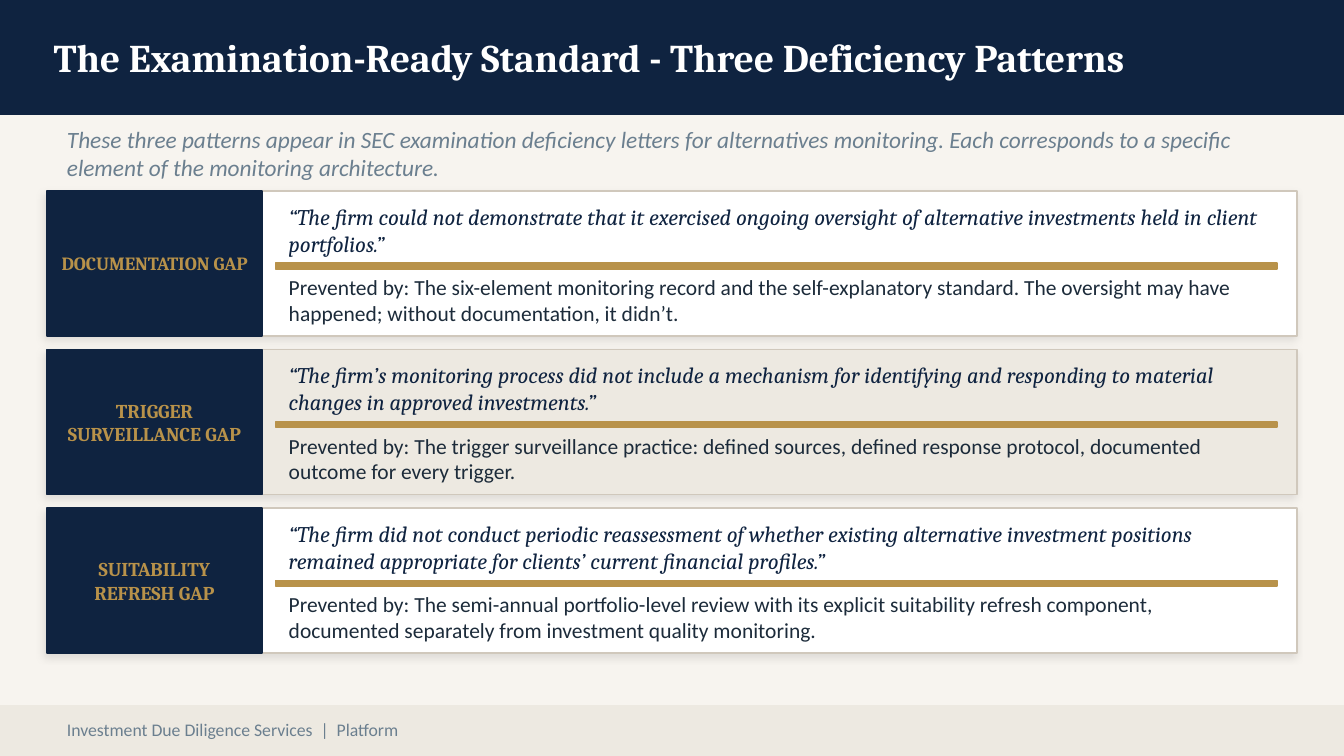
"""Build the slide on three examination deficiency patterns."""
from dataclasses import dataclass

from lxml import etree
from pptx import Presentation
from pptx import util as u
from pptx.dml import color
from pptx.enum import shapes, text
from pptx.oxml import ns


@dataclass(frozen=True)
class Theme:
    """Colours, fonts and type sizes of the slide."""
    navy: str = "0F2340"
    gold: str = "B8924A"
    slate: str = "6B7F8F"
    ink: str = "1C2B3A"
    white: str = "FFFFFF"
    paper: str = "F7F4EF"
    sand: str = "EDE9E1"
    border: str = "D0C8BC"
    serif: str = "Cambria"
    sans: str = "Calibri"
    title: float = 21
    intro: float = 12.5
    quote: float = 12
    remedy: float = 11.5
    label: float = 10.5
    label_small: float = 10
    footer: float = 9.5


@dataclass(frozen=True)
class Pattern:
    """Wording and variations of one deficiency card."""
    label: str
    quote: str
    remedy: str
    fill: str
    label_size: float
    label_inset: float = 0


T = Theme()
WIDTH, HEIGHT = 720, 405
CARD_LEFT, CARD_TOP, CARD_WIDTH, CARD_HEIGHT = 25.2, 102.24, 669.6, 77.76
CARD_PITCH = 84.96
LABEL_WIDTH = 115.2
BODY_LEFT, BODY_WIDTH = 147.6, 536.4

PATTERNS = [
    Pattern(
        "DOCUMENTATION GAP",
        "“The firm could not demonstrate that it exercised ongoing oversight of "
        "alternative investments held in client portfolios.”",
        "Prevented by: The six-element monitoring record and the self-explanatory "
        "standard. The oversight may have happened; without documentation, it didn’t.",
        T.white, T.label_small),
    Pattern(
        "TRIGGER SURVEILLANCE GAP",
        "“The firm’s monitoring process did not include a mechanism for identifying "
        "and responding to material changes in approved investments.”",
        "Prevented by: The trigger surveillance practice: defined sources, defined "
        "response protocol, documented outcome for every trigger.",
        T.sand, T.label),
    Pattern(
        "SUITABILITY REFRESH GAP",
        "“The firm did not conduct periodic reassessment of whether existing "
        "alternative investment positions remained appropriate for clients’ current "
        "financial profiles.”",
        "Prevented by: The semi-annual portfolio-level review with its explicit "
        "suitability refresh component, documented separately from investment "
        "quality monitoring.",
        T.white, T.label, 5.04),
]


def rgb(value):
    """Turn a hex string into a colour."""
    return color.RGBColor.from_string(value)


def add_rect(s, box, fill, line=None):
    """Add a flat rectangle, outlined in its fill unless a line colour is given."""
    sp = s.shapes.add_shape(shapes.MSO_SHAPE.RECTANGLE, *map(u.Pt, box))
    sp.shadow.inherit = False
    sp.fill.solid()
    sp.fill.fore_color.rgb = rgb(fill)
    sp.line.color.rgb = rgb(line or fill)
    sp.line.width = u.Pt(1)
    return sp


def add_shadow(sp):
    """Give a shape a soft, faint outer shadow."""
    effects = sp._element.spPr.find(ns.qn("a:effectLst"))
    shadow = etree.SubElement(
        effects, ns.qn("a:outerShdw"), blurRad=str(u.Pt(4)), dist=str(u.Pt(2)),
        dir=str(135 * 60000), algn="bl", rotWithShape="0")
    black = etree.SubElement(shadow, ns.qn("a:srgbClr"), val="000000")
    etree.SubElement(black, ns.qn("a:alpha"), val="10000")


def add_text(s, box, words, size, font, ink, bold=False, italic=False,
             align=text.PP_ALIGN.LEFT, margins=True):
    """Add a wrapped, vertically centred text box with one run."""
    tf = s.shapes.add_textbox(*map(u.Pt, box)).text_frame
    tf.word_wrap = True
    tf.vertical_anchor = text.MSO_ANCHOR.MIDDLE
    if not margins:
        tf.margin_left = tf.margin_right = tf.margin_top = tf.margin_bottom = 0
    p = tf.paragraphs[0]
    p.alignment = align
    r = p.add_run()
    r.text = words
    r.font.size = u.Pt(size)
    r.font.name = font
    r.font.color.rgb = rgb(ink)
    r.font.bold = bold
    r.font.italic = italic


def add_card(s, top, pattern):
    """Add one deficiency card with its label, quote, rule and remedy."""
    card = add_rect(s, (CARD_LEFT, top, CARD_WIDTH, CARD_HEIGHT), pattern.fill, T.border)
    add_shadow(card)
    add_rect(s, (CARD_LEFT, top, LABEL_WIDTH, CARD_HEIGHT), T.navy)
    inset = pattern.label_inset
    add_text(s, (CARD_LEFT + inset, top, LABEL_WIDTH - 2 * inset, CARD_HEIGHT),
             pattern.label, pattern.label_size, T.serif, T.gold, bold=True,
             align=text.PP_ALIGN.CENTER)
    add_text(s, (BODY_LEFT, top + 5.76, BODY_WIDTH, 30.24), pattern.quote,
             T.quote, T.serif, T.navy, italic=True)
    add_rect(s, (BODY_LEFT, top + 38.88, BODY_WIDTH, 2.88), T.gold)
    add_text(s, (BODY_LEFT, top + 44.64, BODY_WIDTH, 27.36), pattern.remedy,
             T.remedy, T.sans, T.ink)


def add_frame(s):
    """Add the title band, footer band and introduction."""
    add_rect(s, (0, 0, WIDTH, 61.2), T.navy)
    add_text(s, (28.8, 0, 662.4, 61.2),
             "The Examination-Ready Standard - Three Deficiency Patterns",
             T.title, T.serif, T.white, bold=True, margins=False)
    add_rect(s, (0, 378, WIDTH, 27), T.sand)
    add_text(s, (28.8, 379.44, 648, 23.04),
             "Investment Due Diligence Services  |  Platform",
             T.footer, T.sans, T.slate)
    add_text(s, (28.8, 69.84, 662.4, 24.48),
             "These three patterns appear in SEC examination deficiency letters for "
             "alternatives monitoring. Each corresponds to a specific element of the "
             "monitoring architecture.",
             T.intro, T.sans, T.slate, italic=True)


def main():
    """Build and save the presentation."""
    prs = Presentation()
    prs.slide_width, prs.slide_height = u.Pt(WIDTH), u.Pt(HEIGHT)
    s = prs.slides.add_slide(prs.slide_layouts[6])
    s.background.fill.solid()
    s.background.fill.fore_color.rgb = rgb(T.paper)
    add_frame(s)
    for i, pattern in enumerate(PATTERNS):
        add_card(s, CARD_TOP + i * CARD_PITCH, pattern)
    prs.save("out.pptx")


if __name__ == "__main__":
    main()
